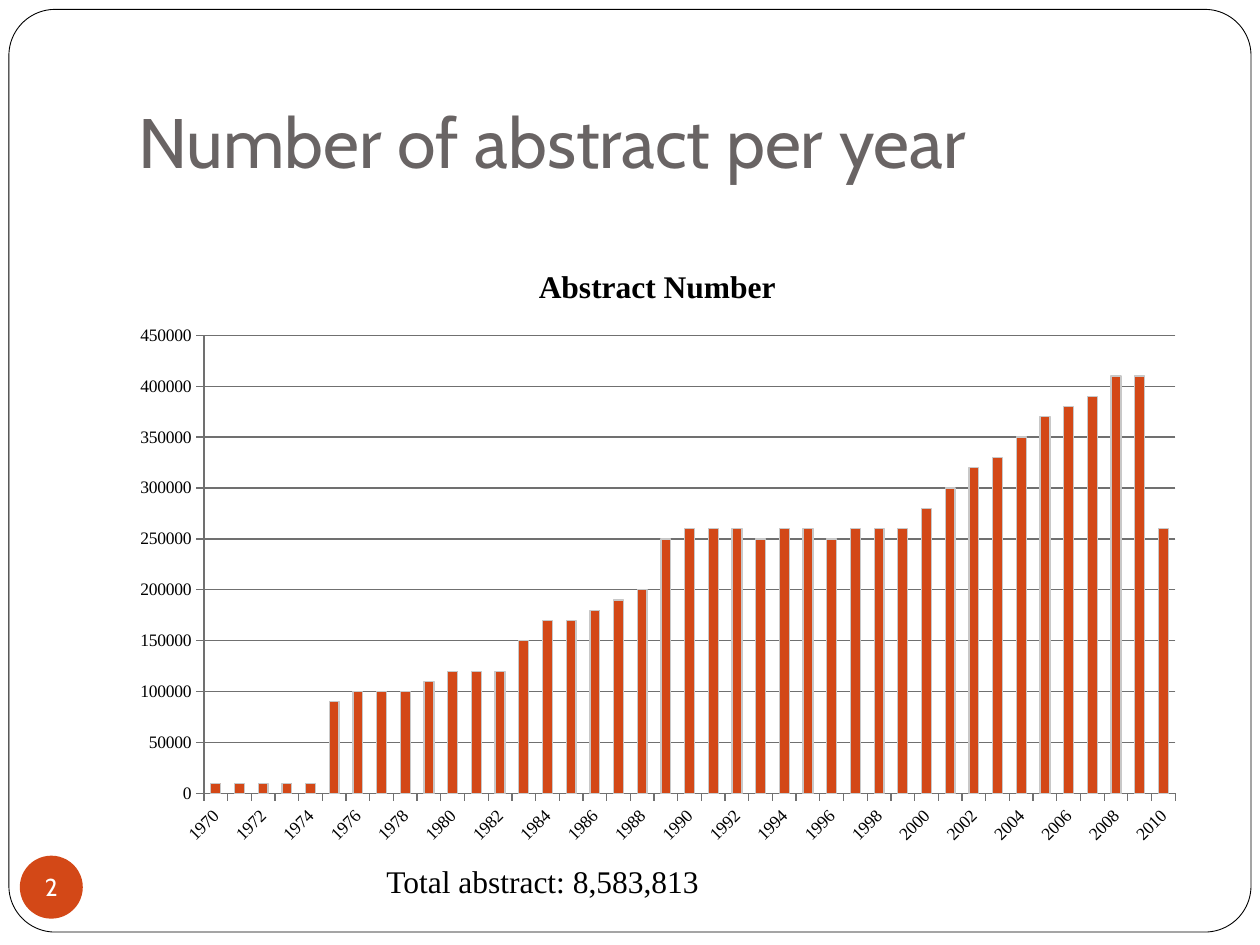
from lxml import etree
from pptx import Presentation
from pptx.chart.data import CategoryChartData
from pptx.dml.color import RGBColor
from pptx.enum.chart import XL_CHART_TYPE, XL_TICK_MARK
from pptx.enum.shapes import MSO_SHAPE
from pptx.enum.text import MSO_ANCHOR, PP_ALIGN
from pptx.oxml import parse_xml
from pptx.oxml.ns import nsdecls, qn
from pptx.util import Cm, Pt

# Content
TITLE = "Number of abstract per year"
CHART_TITLE = "Abstract Number"
TOTAL = "Total abstract: 8,583,813"
PAGE = "2"
FIRST_YEAR = 1970
ABSTRACTS_IN_TEN_THOUSANDS = [
    1, 1, 1, 1, 1, 9, 10, 10, 10, 11,
    12, 12, 12, 15, 17, 17, 18, 19, 20, 25,
    26, 26, 26, 25, 26, 26, 25, 26, 26, 26,
    28, 30, 32, 33, 35, 37, 38, 39, 41, 41, 26,
]

# Style
HEADING_FONT, BODY_FONT = "Cabin", "Times New Roman"
WHITE = RGBColor(0xFF, 0xFF, 0xFF)
BLACK = RGBColor(0, 0, 0)
GRAY = RGBColor(0x69, 0x64, 0x64)
GRID_GRAY = RGBColor(0x70, 0x70, 0x70)
BAR_EDGE = RGBColor(0xC8, 0xC8, 0xC8)
ORANGE = RGBColor(0xD3, 0x48, 0x17)


def set_font(font, name, size, color, bold=False):
    font.name, font.size, font.bold = name, Pt(size), bold
    font.color.rgb = color


def set_margins(frame, left, top, right, bottom):
    frame.margin_left, frame.margin_top = Cm(left), Cm(top)
    frame.margin_right, frame.margin_bottom = Cm(right), Cm(bottom)


def manual_layout(**settings):
    """Chart layout given as fractions of the chart area."""
    layout = parse_xml(f"<c:layout {nsdecls('c')}><c:manualLayout/></c:layout>")
    for tag, value in settings.items():
        etree.SubElement(layout[0], qn(f"c:{tag}")).set("val", str(value))
    return layout


def replace_layout(parent, layout, position):
    for old in parent.findall(qn("c:layout")):
        parent.remove(old)
    parent.insert(position, layout)


prs = Presentation()
prs.slide_width, prs.slide_height = Cm(25.4), Cm(19.05)
slide = prs.slides.add_slide(prs.slide_layouts[5])
shapes = slide.shapes

# Rounded frame, behind everything else
frame = shapes.add_shape(MSO_SHAPE.ROUNDED_RECTANGLE, Cm(0.18), Cm(0.19), Cm(25.04), Cm(18.6))
frame.adjustments[0] = 0.05
frame.shadow.inherit = False
frame.fill.solid()
frame.fill.fore_color.rgb = WHITE
frame.line.color.rgb = BLACK
frame.line.width = Pt(0.5)
shapes.title._element.addprevious(frame._element)

# Title
title = shapes.title
title.left, title.top, title.width, title.height = Cm(2.54), Cm(0.74), Cm(21.59), Cm(3.18)
title.text_frame.text = TITLE
title.text_frame.vertical_anchor = MSO_ANCHOR.BOTTOM
set_margins(title.text_frame, 0.25, 0.13, 0.25, 0.25)
title.text_frame.paragraphs[0].alignment = PP_ALIGN.LEFT
set_font(title.text_frame.paragraphs[0].runs[0].font, HEADING_FONT, 40, GRAY)

# Page number badge
badge = shapes.add_shape(MSO_SHAPE.OVAL, Cm(0.4), Cm(17.25), Cm(1.27), Cm(1.27))
badge.shadow.inherit = False
badge.fill.solid()
badge.fill.fore_color.rgb = ORANGE
badge.line.fill.background()
badge.text_frame.text = PAGE
badge.text_frame.word_wrap = False
badge.text_frame.vertical_anchor = MSO_ANCHOR.MIDDLE
set_margins(badge.text_frame, 0, 0, 0, 0)
badge.text_frame.paragraphs[0].alignment = PP_ALIGN.CENTER
set_font(badge.text_frame.paragraphs[0].runs[0].font, HEADING_FONT, 14, WHITE)

# Column chart
abstracts = CategoryChartData()
abstracts.categories = [str(FIRST_YEAR + i) for i in range(len(ABSTRACTS_IN_TEN_THOUSANDS))]
abstracts.add_series("Series 1", [count * 10000 for count in ABSTRACTS_IN_TEN_THOUSANDS])
chart = shapes.add_chart(XL_CHART_TYPE.COLUMN_CLUSTERED, Cm(2.37), Cm(4.9),
                         Cm(21.76), Cm(12.4), abstracts).chart
set_font(chart.font, BODY_FONT, 10, BLACK)
chart.has_legend = False
chart.has_title = True
chart.chart_title.text_frame.text = CHART_TITLE
set_font(chart.chart_title.text_frame.paragraphs[0].runs[0].font, BODY_FONT, 18, BLACK, bold=True)

plot = chart.plots[0]
plot.gap_width = 140
plot.vary_by_categories = False
columns = plot.series[0].format
columns.fill.solid()
columns.fill.fore_color.rgb = ORANGE
columns.line.color.rgb = BAR_EDGE
columns.line.width = Pt(0.75)

# Axes
years, counts = chart.category_axis, chart.value_axis
counts.minimum_scale, counts.maximum_scale, counts.major_unit = 0, 450000, 50000
counts.has_major_gridlines = True
counts.tick_labels.number_format = "0"
counts.tick_labels.number_format_is_linked = False
for axis in (years, counts):
    axis.major_tick_mark = XL_TICK_MARK.OUTSIDE
    set_font(axis.tick_labels.font, BODY_FONT, 10, BLACK)
for line in (years.format.line, counts.format.line, counts.major_gridlines.format.line):
    line.color.rgb = GRID_GRAY
    line.width = Pt(0.75)

# Slanted labels on every second year
years._element.find(qn("c:txPr")).find(qn("a:bodyPr")).set("rot", "-2700000")
label_skip = parse_xml(f'<c:tickLblSkip {nsdecls("c")} val="2"/>')
years._element.find(qn("c:noMultiLvlLbl")).addprevious(label_skip)

# Chart title and plot positions
replace_layout(chart.chart_title._element,
               manual_layout(xMode="edge", yMode="edge", x=0.385, y=0.03), 1)
replace_layout(chart._chartSpace.chart.plotArea,
               manual_layout(layoutTarget="inner", xMode="edge", yMode="edge",
                             x=0.08, y=0.15, w=0.9, h=0.745), 0)

# Total below the chart
total = shapes.add_textbox(Cm(7.54), Cm(17.25), Cm(9.93), Cm(1.02))
total.text_frame.word_wrap = True
total.text_frame.text = TOTAL
set_font(total.text_frame.paragraphs[0].runs[0].font, BODY_FONT, 18, BLACK)

prs.save("out.pptx")
